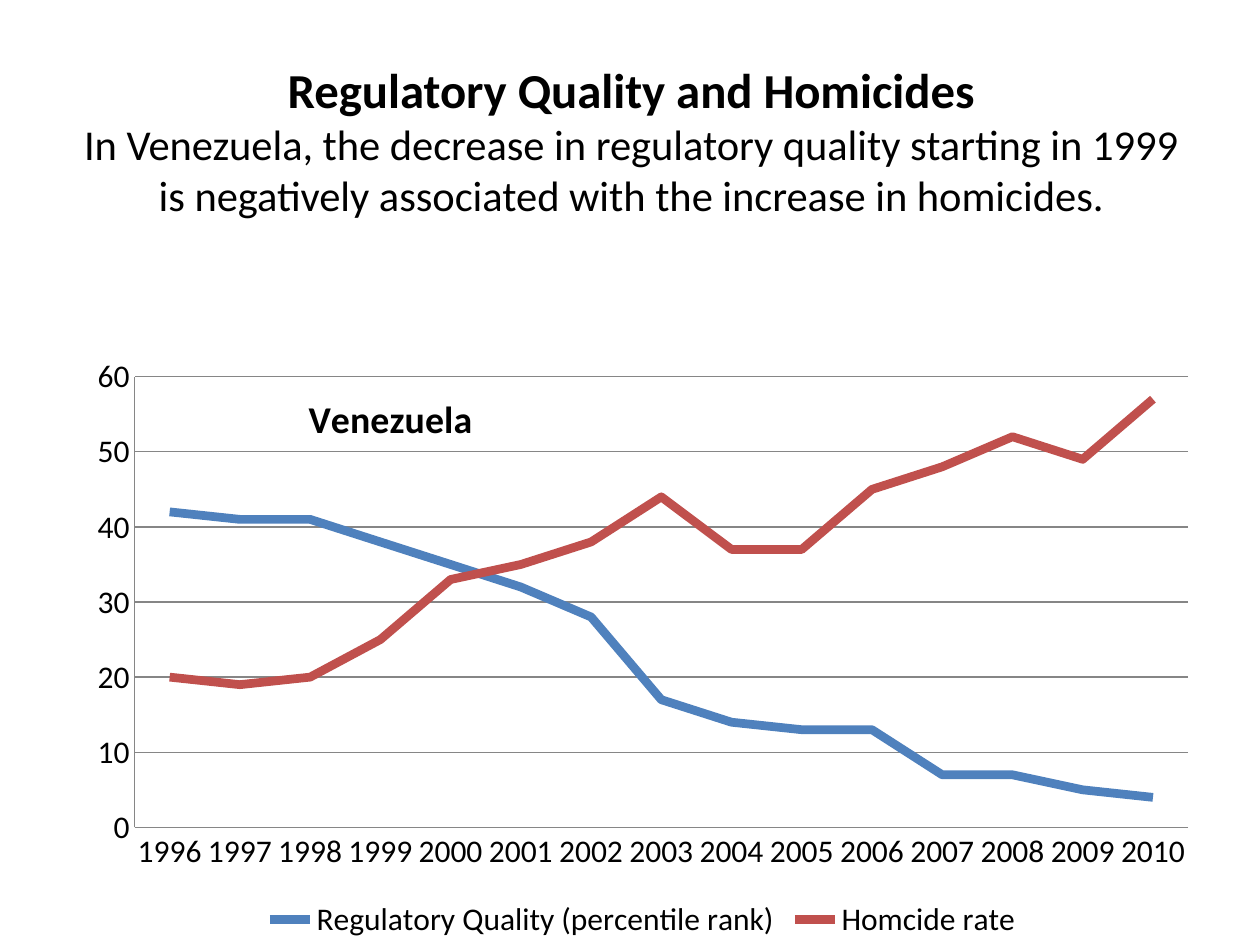
import pptx
import pptx.chart.data
import pptx.dml.color
import pptx.enum.chart
import pptx.enum.text
import pptx.oxml
import pptx.oxml.ns
import pptx.util

BLACK = pptx.dml.color.RGBColor(0x00, 0x00, 0x00)
GRAY = pptx.dml.color.RGBColor(0x86, 0x86, 0x86)
BLUE = pptx.dml.color.RGBColor(0x4F, 0x81, 0xBD)
RED = pptx.dml.color.RGBColor(0xC0, 0x50, 0x4D)
FONT = "Calibri"


def style_font(font, size, bold):
    font.name = FONT
    font.size = pptx.util.Pt(size)
    font.bold = bold
    font.color.rgb = BLACK


def set_layout(parent, position, **settings):
    qn = pptx.oxml.ns.qn
    for old in parent.findall(qn("c:layout")):
        parent.remove(old)
    entries = "".join(f'<c:{tag} val="{value}"/>' for tag, value in settings.items())
    parent.insert(position, pptx.oxml.parse_xml(
        f'<c:layout {pptx.oxml.ns.nsdecls("c")}>'
        f"<c:manualLayout>{entries}</c:manualLayout></c:layout>"))


deck = pptx.Presentation()
deck.slide_width = pptx.util.Inches(10)
deck.slide_height = pptx.util.Inches(7.5)
page = deck.slides.add_slide(deck.slide_layouts[5])

title = page.shapes.title
title.left, title.top = pptx.util.Inches(0.51), pptx.util.Inches(0.76)
title.width, title.height = pptx.util.Inches(9), pptx.util.Inches(1.25)
frame = title.text_frame
frame.text = (
    "Regulatory Quality and Homicides\v"
    "In Venezuela, the decrease in regulatory quality starting in 1999 "
    "is negatively associated with the increase in homicides."
)
frame.word_wrap = True
frame.auto_size = pptx.enum.text.MSO_AUTO_SIZE.NONE
frame.vertical_anchor = pptx.enum.text.MSO_ANCHOR.BOTTOM
frame.margin_bottom = pptx.util.Inches(0.26)
para = frame.paragraphs[0]
para.alignment = pptx.enum.text.PP_ALIGN.CENTER
for span, size, bold in zip(para.runs, (27.9, 24.3), (True, False)):
    style_font(span.font, size, bold)

data = pptx.chart.data.CategoryChartData()
data.categories = [str(year) for year in range(1996, 2011)]
data.add_series("Regulatory Quality (percentile rank)",
                [42, 41, 41, 38, 35, 32, 28, 17, 14, 13, 13, 7, 7, 5, 4])
data.add_series("Homcide rate",
                [20, 19, 20, 25, 33, 35, 38, 44, 37, 37, 45, 48, 52, 49, 57])
chart = page.shapes.add_chart(
    pptx.enum.chart.XL_CHART_TYPE.LINE,
    pptx.util.Inches(0.59), pptx.util.Inches(2.02),
    pptx.util.Inches(9.02), pptx.util.Inches(5.48), data).chart
style_font(chart.font, 18, False)

chart.has_title = True
chart.chart_title.text_frame.text = "Venezuela"
style_font(chart.chart_title.text_frame.paragraphs[0].runs[0].font, 21.6, True)
heading = chart.chart_title._element
set_layout(heading, 1, xMode="edge", yMode="edge", x=0.2, y=0.19)
heading.find(pptx.oxml.ns.qn("c:overlay")).set("val", "1")
set_layout(chart._chartSpace.chart.plotArea, 0, layoutTarget="inner",
           xMode="edge", yMode="edge", x=0.053, y=0.177, w=0.927, h=0.653)

chart.has_legend = True
chart.legend.position = pptx.enum.chart.XL_LEGEND_POSITION.BOTTOM
chart.legend.include_in_layout = False
style_font(chart.legend.font, 18, False)

for axis in (chart.category_axis, chart.value_axis):
    axis.major_tick_mark = pptx.enum.chart.XL_TICK_MARK.NONE
    axis.minor_tick_mark = pptx.enum.chart.XL_TICK_MARK.NONE
    axis.format.line.color.rgb = GRAY
    style_font(axis.tick_labels.font, 18, False)
chart.value_axis.minimum_scale = 0
chart.value_axis.maximum_scale = 60
chart.value_axis.major_unit = 10
chart.value_axis.has_major_gridlines = True
chart.value_axis.major_gridlines.format.line.color.rgb = GRAY

chart.plots[0].vary_by_categories = False
for series, color in zip(chart.plots[0].series, (BLUE, RED)):
    series.smooth = False
    series.marker.style = pptx.enum.chart.XL_MARKER_STYLE.NONE
    series.format.line.color.rgb = color
    series.format.line.width = pptx.util.Pt(5)

deck.save("out.pptx")
